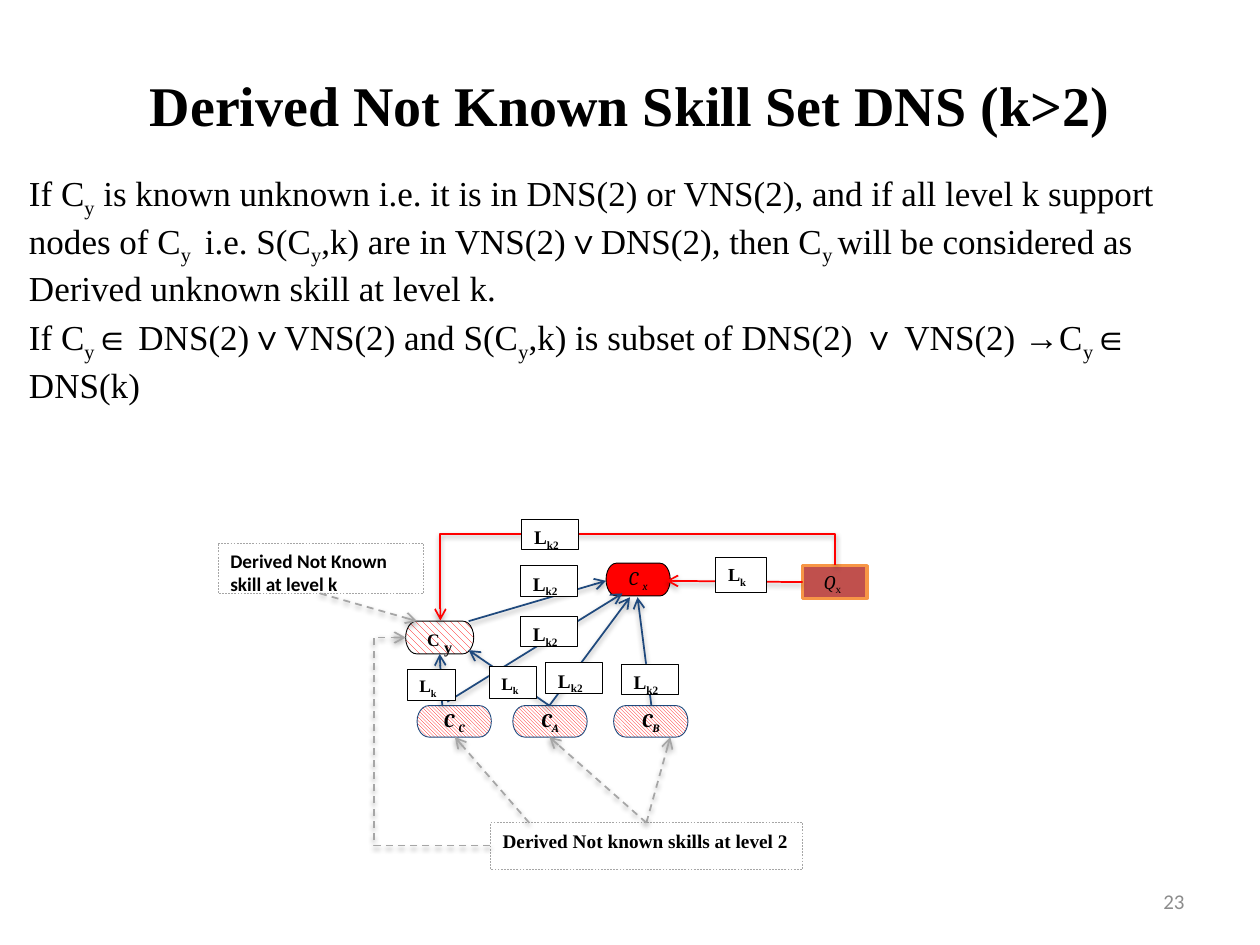
import pptx
import pptx.dml.color
import pptx.enum.dml
import pptx.enum.shapes
import pptx.enum.text
import pptx.oxml
import pptx.oxml.ns
import pptx.util

Inches = pptx.util.Inches
Pt = pptx.util.Pt
SHAPE = pptx.enum.shapes.MSO_SHAPE
CONNECTOR = pptx.enum.shapes.MSO_CONNECTOR
ALIGN = pptx.enum.text.PP_ALIGN
ANCHOR = pptx.enum.text.MSO_ANCHOR
DASH = pptx.enum.dml.MSO_LINE.DASH
PATTERN = pptx.enum.dml.MSO_PATTERN
qn = pptx.oxml.ns.qn

SERIF = "Times New Roman"
COLORS = {
    "black": "000000", "white": "FFFFFF", "red": "FF0000", "blue": "1F497D",
    "gray": "A6A6A6", "brick": "C0504D", "orange": "F79646", "number": "8C8C8C",
}
SHADOW = (
    '<a:effectLst %s><a:outerShdw blurRad="39400" dist="20300" dir="5400000" rotWithShape="0">'
    '<a:srgbClr val="000000"><a:alpha val="38000"/></a:srgbClr></a:outerShdw></a:effectLst>'
    % pptx.oxml.ns.nsdecls("a")
)


def color(name):
    return pptx.dml.color.RGBColor.from_string(COLORS[name])


def style_font(font, size, name=SERIF, bold=False, italic=False, ink="black"):
    font.size, font.name = Pt(size), name
    font.bold, font.italic = bold, italic
    font.color.rgb = color(ink)


def add_runs(paragraph, *texts):
    runs = []
    for index, text in enumerate(texts):
        run = paragraph.add_run()
        run.text = text
        if index % 2:
            run.font._element.set("baseline", "-25000")
        runs.append(run)
    return runs


def add_title(slide, left, top, width, height):
    title = slide.shapes.title
    title.left, title.top = Inches(left), Inches(top)
    title.width, title.height = Inches(width), Inches(height)
    title.text_frame.vertical_anchor = ANCHOR.MIDDLE
    paragraph = title.text_frame.paragraphs[0]
    paragraph.text = "Derived Not Known Skill Set DNS (k>2)"
    paragraph.alignment = ALIGN.CENTER
    style_font(paragraph.font, 32, bold=True)


def add_body(slide, left, top, width, height):
    body = slide.placeholders[1]
    body.left, body.top = Inches(left), Inches(top)
    body.width, body.height = Inches(width), Inches(height)
    statements = [
        ("If C", "y", " is known unknown i.e. it is in DNS(2) or VNS(2), and if all "
         "level k support nodes of C", "y ", " i.e. S(C", "y",
         ",k) are in VNS(2)∨DNS(2), then C", "y ",
         "will be considered as Derived unknown skill at level k."),
        ("If C", "y", "∈ DNS(2)∨VNS(2) and S(C", "y",
         ",k) is subset of DNS(2) ∨ VNS(2) →C", "y", "∈ DNS(k)"),
    ]
    frame = body.text_frame
    for index, texts in enumerate(statements):
        paragraph = frame.add_paragraph() if index else frame.paragraphs[0]
        paragraph.space_before = Pt(4 * index)
        properties = paragraph._p.get_or_add_pPr()
        properties.set("marL", "0")
        properties.set("indent", "0")
        properties.append(properties.makeelement(qn("a:buNone"), {}))
        style_font(paragraph.font, 20)
        add_runs(paragraph, *texts)


def add_slide_number(slide, left, top, width, height):
    box = slide.shapes.add_textbox(Inches(left), Inches(top), Inches(width), Inches(height))
    box.text_frame.word_wrap = True
    box.text_frame.vertical_anchor = ANCHOR.MIDDLE
    paragraph = box.text_frame.paragraphs[0]
    paragraph.text = "23"
    paragraph.alignment = ALIGN.RIGHT
    style_font(paragraph.font, 12, "Calibri", ink="number")


def add_box(slide, kind, left, top, width, height, line, line_width, fill=None, pattern=None):
    shape = slide.shapes.add_shape(
        kind, Inches(left), Inches(top), Inches(width), Inches(height))
    shape.shadow.inherit = False
    shape.line.color.rgb = color(line)
    shape.line.width = Pt(line_width)
    if pattern:
        shape.fill.patterned()
        shape.fill.pattern = pattern
        shape.fill.fore_color.rgb = color("red")
        shape.fill.back_color.rgb = color("white")
    elif fill:
        shape.fill.solid()
        shape.fill.fore_color.rgb = color(fill)
    else:
        shape.fill.background()
    shape.text_frame.word_wrap = True
    return shape


def add_node(slide, box, texts, line, line_width, size=11, kind=SHAPE.FLOWCHART_TERMINATOR,
             fill=None, pattern=None, name="Cambria", bold=True, italic=True):
    shape = add_box(slide, kind, *box, line, line_width, fill, pattern)
    frame = shape.text_frame
    frame.margin_left = frame.margin_right = 0
    frame.vertical_anchor = ANCHOR.MIDDLE
    paragraph = frame.paragraphs[0]
    paragraph.alignment = ALIGN.CENTER
    style_font(paragraph.font, size, name, bold, italic)
    return add_runs(paragraph, *texts)


def add_note(slide, box, text, name):
    shape = add_box(slide, SHAPE.RECTANGLE, *box, "gray", 0.25)
    shape.line.dash_style = DASH
    add_left_text(shape, 11, name, text)


def add_left_text(shape, size, name, *texts):
    shape.text_frame.vertical_anchor = ANCHOR.TOP
    paragraph = shape.text_frame.paragraphs[0]
    paragraph.alignment = ALIGN.LEFT
    style_font(paragraph.font, size, name, bold=True)
    add_runs(paragraph, *texts)


def add_arrow(slide, left, top, ends, ink, dashed=False, kind=CONNECTOR.STRAIGHT, tip="tailEnd"):
    x1, y1, x2, y2 = ends
    arrow = slide.shapes.add_connector(
        kind, Inches(left + x1), Inches(top + y1), Inches(left + x2), Inches(top + y2))
    arrow.line.color.rgb = color(ink)
    arrow.line.width = Pt(1)
    if dashed:
        arrow.line.dash_style = DASH
    line = arrow.line._get_or_add_ln()
    line.append(line.makeelement(qn("a:" + tip), {"type": "arrow"}))
    properties = arrow._element.spPr
    properties.append(pptx.oxml.parse_xml(SHADOW))
    return properties


def add_elbow(slide, left, top, ends, ink, degrees, bend, **options):
    properties = add_arrow(slide, left, top, ends, ink, kind=CONNECTOR.ELBOW, **options)
    properties.find(qn("a:xfrm")).set("rot", str(degrees * 60000))
    guides = properties.find(qn("a:prstGeom")).get_or_add_avLst()
    guides.append(guides.makeelement(qn("a:gd"), {"name": "adj1", "fmla": f"val {bend}"}))


def add_diagram(slide, left, top):
    def place(x, y, width, height):
        return left + x, top + y, width, height

    for x, texts in ((1.61, ("C\u00a0", "C")), (2.37, ("C", "A")), (3.17, ("C", "B"))):
        add_node(slide, place(x, 1.5, 0.59, 0.25), texts, "blue", 0.5,
                 pattern=PATTERN.LIGHT_DOWNWARD_DIAGONAL)
    add_node(slide, place(3.11, 0.37, 0.51, 0.26), ("C\u00a0", "x"), "black", 0.5,
             fill="red", bold=False)
    target = add_node(slide, place(1.52, 0.83, 0.54, 0.26), ("C\u00a0", "y"), "black", 0.5, 10,
                      pattern=PATTERN.WIDE_DOWNWARD_DIAGONAL, name=SERIF, italic=False)
    target[1].font.size = Pt(16)
    query = add_node(slide, place(4.67, 0.39, 0.51, 0.26), ("Q", "x", "\u00a0"), "orange", 2,
                     kind=SHAPE.RECTANGLE, fill="brick", bold=False)
    query[1].font.name, query[1].font.italic = SERIF, False
    query[2].font.size = Pt(12)

    add_note(slide, place(0.03, 0.21, 1.63, 0.4), "Derived Not Known skill at level k", "Calibri")
    add_note(slide, place(2.19, 2.43, 2.48, 0.37), "Derived Not known skills at level 2", SERIF)

    for ends in ((2.02, 0.83, 3.11, 0.51), (1.81, 1.5, 1.79, 1.09), (2.66, 1.5, 2.02, 1.06),
                 (3.47, 1.5, 3.36, 0.64), (2.66, 1.5, 3.3, 0.64), (1.85, 1.47, 3.24, 0.61)):
        add_arrow(slide, left, top, ends, "blue")
    add_arrow(slide, left, top, (4.67, 0.52, 3.59, 0.51), "red")
    for ends in ((0.84, 0.61, 1.61, 0.83), (3.43, 2.43, 3.62, 1.75),
                 (3.43, 2.43, 2.66, 1.75), (2.5, 2.43, 1.91, 1.75)):
        add_arrow(slide, left, top, ends, "gray", dashed=True)
    add_elbow(slide, left, top, (3.58, 2.17, 3.14, -0.96), "red", 90, 156600, tip="headEnd")
    add_elbow(slide, left, top, (1.52, 0.96, 2.19, 2.61), "gray", 180, 137400, dashed=True)

    labels = [(3.98, 0.32, 0.4, 0.28, "k", 10.5), (1.53, 1.21, 0.38, 0.25, "k", 10),
              (2.18, 1.19, 0.38, 0.25, "k", 10)]
    labels += [(x, y, 0.45, 0.24, "k2", 11) for x, y in (
        (2.43, 0.39), (2.44, 0.02), (2.43, 0.79), (3.23, 1.17), (2.63, 1.16))]
    for x, y, width, height, level, size in labels:
        label = add_box(slide, SHAPE.RECTANGLE, *place(x, y, width, height),
                        "black", 0.25, "white")
        add_left_text(label, size, SERIF, "L", level)


def main():
    presentation = pptx.Presentation()
    presentation.slide_width, presentation.slide_height = Inches(10), Inches(7.5)
    slide = presentation.slides.add_slide(presentation.slide_layouts[1])
    add_body(slide, 0.13, 1.31, 9.71, 5.91)
    add_title(slide, 0.5, 0.2, 9, 1.25)
    add_slide_number(slide, 7.17, 6.95, 2.33, 0.4)
    add_diagram(slide, 1.7, 4.1)
    presentation.save("out.pptx")


if __name__ == "__main__":
    main()
